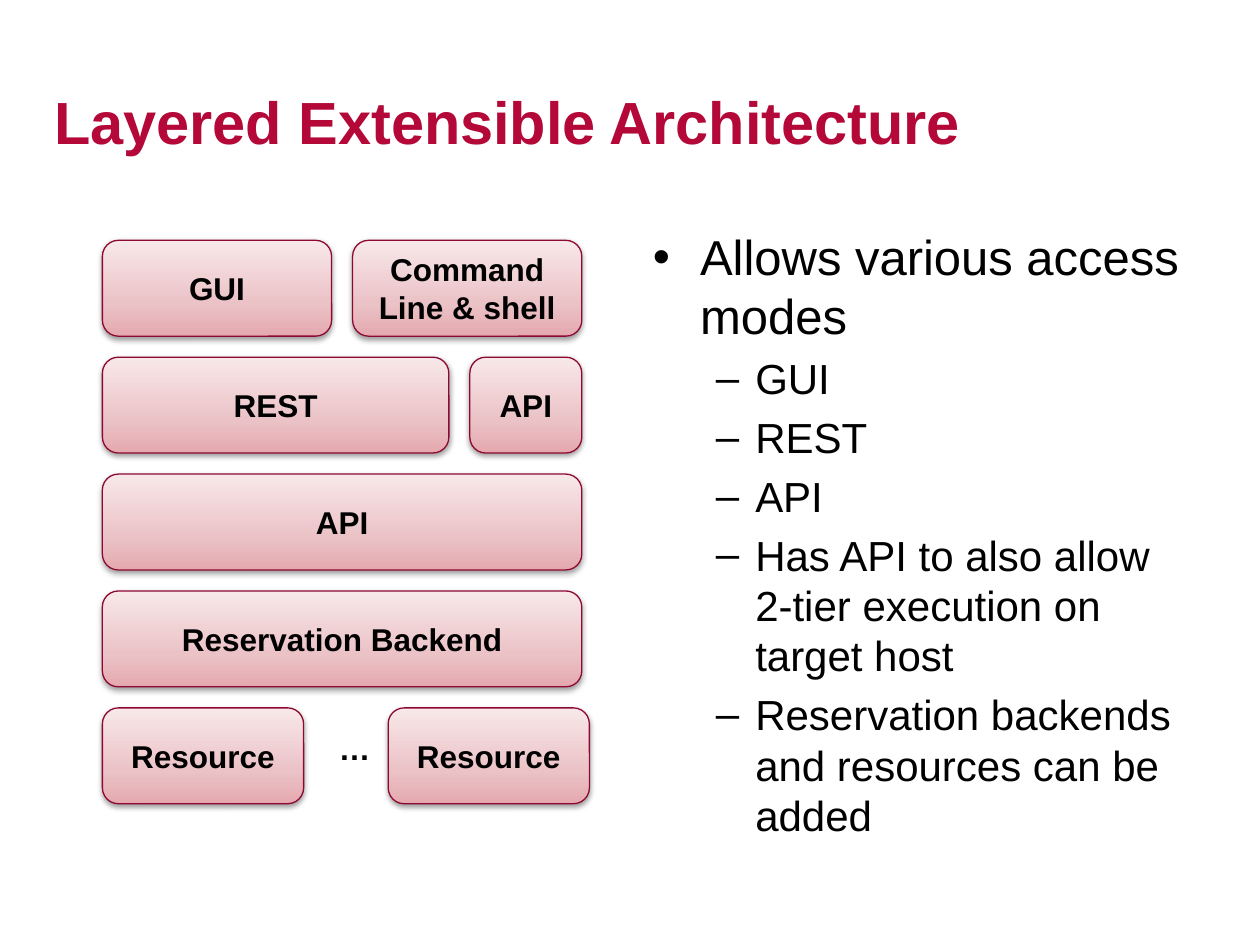
from copy import deepcopy

from lxml.etree import SubElement
from pptx import Presentation
from pptx.dml.color import RGBColor
from pptx.enum.shapes import MSO_SHAPE as Shape
from pptx.enum.text import MSO_ANCHOR as Anchor, PP_ALIGN as Align
from pptx.oxml.ns import qn
from pptx.util import Pt

BLACK, CRIMSON, MAROON = "000000", "B30838", "8E0931"
GRADIENT = [(0, "E4A9AF"), (0.35, "EBC3C7"), (1, "F8E8E9")]
LABEL = {"size": Pt(18), "bold": True}
LAYERS = [
    (12, [("GUI", 131), ("Command Line & shell", 131)]),
    (12, [("REST", 198), ("API", 64)]),
    (12, [("API", 274)]),
    (12, [("Reservation Backend", 274)]),
    (48.3, [("Resource", 115), ("Resource", 115)]),
]
LEVELS = [
    {"bullet": "•", "margin": 27, "hanging": 27, "size": 28},
    {"bullet": "–", "margin": 58.5, "hanging": 22.5, "size": 24},
]
POINTS = [
    (0, "Allows various access modes"),
    (1, "GUI"),
    (1, "REST"),
    (1, "API"),
    (1, "Has API to also allow 2-tier execution on target host"),
    (1, "Reservation backends and resources can be added"),
]


def rgb(value):
    return RGBColor.from_string(value)


def style(paragraph, values, color=BLACK):
    for key, value in {"name": "Arial", **values}.items():
        setattr(paragraph.font, key, value)
    paragraph.font.color.rgb = rgb(color)


def add_text_frame(slide, box, wrap=True):
    frame = slide.shapes.add_textbox(*map(Pt, box)).text_frame
    frame.word_wrap = wrap
    return frame


def add_shadow(block):
    block.shadow.inherit = False
    effects = block.element.spPr.find(qn("a:effectLst"))
    shadow = SubElement(effects, qn("a:outerShdw"), blurRad="40000",
                        dist="20000", dir="5400000", rotWithShape="0")
    shade = SubElement(shadow, qn("a:srgbClr"), val=BLACK)
    SubElement(shade, qn("a:alpha"), val="38000")


def fill_gradient(block):
    block.fill.gradient()
    block.fill.gradient_angle = 90
    stops = block.element.spPr.find(".//" + qn("a:gsLst"))
    stops.append(deepcopy(stops[0]))
    for stop, (position, color) in zip(block.fill.gradient_stops, GRADIENT):
        stop.position = position
        stop.color.rgb = rgb(color)


def add_block(slide, box, label):
    block = slide.shapes.add_shape(Shape.ROUNDED_RECTANGLE, *map(Pt, box))
    fill_gradient(block)
    block.line.color.rgb = rgb(MAROON)
    block.line.width = Pt(0.75)
    add_shadow(block)
    frame = block.text_frame
    frame.word_wrap = True
    frame.vertical_anchor = Anchor.MIDDLE
    paragraph = frame.paragraphs[0]
    paragraph.text = label
    paragraph.alignment = Align.CENTER
    style(paragraph, LABEL)


def add_title(slide, box):
    frame = add_text_frame(slide, box)
    frame.vertical_anchor = Anchor.MIDDLE
    frame.text = "Layered Extensible Architecture"
    style(frame.paragraphs[0], {"size": Pt(34), "bold": True}, CRIMSON)


def add_layers(slide, box):
    left, top, width, height = box
    row_gap = 12
    row_height = (height - row_gap * (len(LAYERS) - 1)) / len(LAYERS)
    for row, (gap, blocks) in enumerate(LAYERS):
        x, y = left, top + row * (row_height + row_gap)
        for label, block_width in blocks:
            add_block(slide, (x, y, block_width, row_height), label)
            x += block_width + gap
    ellipsis = add_text_frame(slide, (left + 128, y + 8.5, 27.4, 29), wrap=False)
    ellipsis.text = "…"
    style(ellipsis.paragraphs[0], LABEL)


def add_points(slide, box):
    frame = add_text_frame(slide, box)
    for index, (level, text) in enumerate(POINTS):
        form = LEVELS[level]
        paragraph = frame.add_paragraph() if index else frame.paragraphs[0]
        paragraph.text = text
        paragraph.level = level
        if index:
            paragraph.space_before = Pt(form["size"] * 0.2)
        props = paragraph._p.get_or_add_pPr()
        props.set("marL", str(Pt(form["margin"])))
        props.set("indent", str(-Pt(form["hanging"])))
        SubElement(props, qn("a:buFont"), typeface="Arial")
        SubElement(props, qn("a:buChar"), char=form["bullet"])
        style(paragraph, {"size": Pt(form["size"])})


def main():
    deck = Presentation()
    deck.slide_width, deck.slide_height = Pt(720), Pt(540)
    slide = deck.slides.add_slide(deck.slide_layouts[6])
    add_title(slide, (24, 24, 660, 90))
    add_points(slide, (366, 126, 318, 356.4))
    add_layers(slide, (58.5, 137.3, 274, 322))
    deck.save("out.pptx")


if __name__ == "__main__":
    main()
